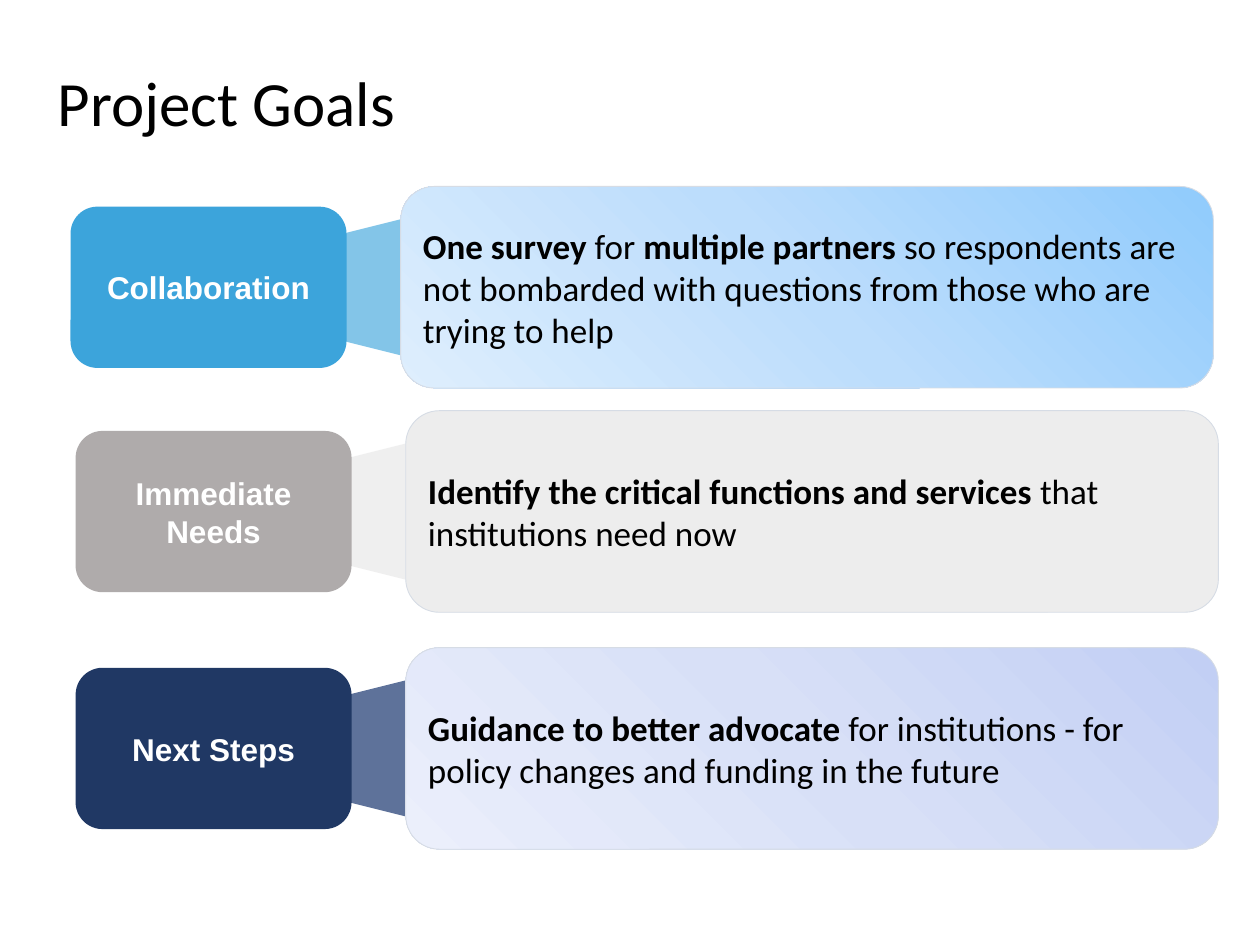
import copy

import pptx
import pptx.dml.color
import pptx.enum.shapes
import pptx.enum.text
import pptx.oxml
import pptx.oxml.ns
import pptx.util
from pptx.util import Inches

COLORS = {
    "black": "000000", "white": "FFFFFF", "outline": "D6DCE5",
    "blue": "3CA4DB", "blue_panel": ["90CBFC", "BCDDFC", "DEEEFD"],
    "gray": "AFABAB", "gray_link": "E7E6E6", "gray_panel": ["EDEDED"],
    "navy": "203864", "navy_link": "002060", "navy_panel": ["C2CFF4", "D8E0F7", "EBEFFB"],
}
TITLE = "Project Goals"
# Text is a list of (words, bold); left and middle place the row, in inches.
GOALS = [
    {"label": "Collaboration", "left": 0.56, "middle": 2.28,
     "label_fill": "blue", "link_fill": "blue", "panel_fill": "blue_panel",
     "text": [("One survey ", True), ("for ", False), ("multiple partners ", True),
              ("so respondents are not bombarded with questions "
               "from those who are trying to help", False)]},
    {"label": "Immediate Needs", "left": 0.6, "middle": 4.06,
     "label_fill": "gray", "link_fill": "gray_link", "panel_fill": "gray_panel",
     "text": [("Identify the critical functions and services ", True),
              ("that institutions need now", False)]},
    {"label": "Next Steps", "left": 0.6, "middle": 5.94,
     "label_fill": "navy", "link_fill": "navy_link", "panel_fill": "navy_panel",
     "text": [("Guidance to better advocate ", True),
              ("for institutions - for policy changes and funding in the future", False)]},
]
# Horizontal offset from the row's left edge, width, height
LABEL = (0, 2.19, 1.28)
LINK = (1.65, 1.08, 0.86)
PANEL = (2.62, 6.45, 1.6)
LINK_OPACITY = 63
SHAPE = pptx.enum.shapes.MSO_SHAPE
ALIGN = pptx.enum.text.PP_ALIGN


def rgb(value):
    return pptx.dml.color.RGBColor.from_string(value)


def write(shape, spans, size, font, color, align=ALIGN.LEFT, line_spacing=None):
    """Fill a shape with one paragraph of (words, bold) spans."""
    frame = shape.text_frame
    frame.word_wrap = True
    frame.vertical_anchor = pptx.enum.text.MSO_ANCHOR.MIDDLE
    para = frame.paragraphs[0]
    para.alignment = align
    para.line_spacing = line_spacing
    for words, bold in spans:
        span = para.add_run()
        span.text = words
        span.font.size = pptx.util.Pt(size)
        span.font.name = font
        span.font.bold = bold
        span.font.color.rgb = rgb(COLORS[color])


def paint(shape, colors):
    """Fill with one colour, or with three running from top right to bottom left."""
    fill = shape.fill
    if len(colors) == 1:
        fill.solid()
        fill.fore_color.rgb = rgb(colors[0])
        return
    fill.gradient()
    fill.gradient_angle = 225
    first = shape._element.spPr.find(".//" + pptx.oxml.ns.qn("a:gs"))
    first.addnext(copy.deepcopy(first))
    for stop, color, position in zip(fill.gradient_stops, colors, (0, 0.5, 1)):
        stop.color.rgb = rgb(color)
        stop.position = position


def add_part(group, kind, goal, geometry, colors):
    """Add a shape centred on the middle line of its row."""
    offset, width, height = geometry
    shape = group.shapes.add_shape(
        kind, Inches(goal["left"] + offset), Inches(goal["middle"] - height / 2),
        Inches(width), Inches(height))
    shape.shadow.inherit = False
    shape.line.fill.background()
    paint(shape, colors)
    return shape


def add_goal(page, goal):
    group = page.shapes.add_group_shape()

    link = add_part(group, SHAPE.TRAPEZOID, goal, LINK, [COLORS[goal["link_fill"]]])
    link.rotation = 270
    color = link._element.spPr.find(".//" + pptx.oxml.ns.qn("a:srgbClr"))
    alpha = pptx.oxml.parse_xml(
        f'<a:alpha {pptx.oxml.ns.nsdecls("a")} val="{LINK_OPACITY * 1000}"/>')
    color.append(alpha)

    label = add_part(group, SHAPE.ROUNDED_RECTANGLE, goal, LABEL,
                     [COLORS[goal["label_fill"]]])
    write(label, [(goal["label"], True)], 18, "Arial", "white", align=ALIGN.CENTER)

    panel = add_part(group, SHAPE.FLOWCHART_ALTERNATE_PROCESS, goal, PANEL,
                     COLORS[goal["panel_fill"]])
    panel.line.color.rgb = rgb(COLORS["outline"])
    panel.line.width = pptx.util.Pt(0.5)
    write(panel, goal["text"], 20, "Calibri", "black")


def main():
    deck = pptx.Presentation()
    deck.slide_width, deck.slide_height = Inches(10), Inches(7.5)
    page = deck.slides.add_slide(deck.slide_layouts[6])
    title = page.shapes.add_textbox(Inches(0.36), Inches(0.12), Inches(8.62), Inches(1.45))
    write(title, [(TITLE, False)], 36, "Calibri", "black", line_spacing=0.9)
    for goal in GOALS:
        add_goal(page, goal)
    deck.save("out.pptx")


if __name__ == "__main__":
    main()
